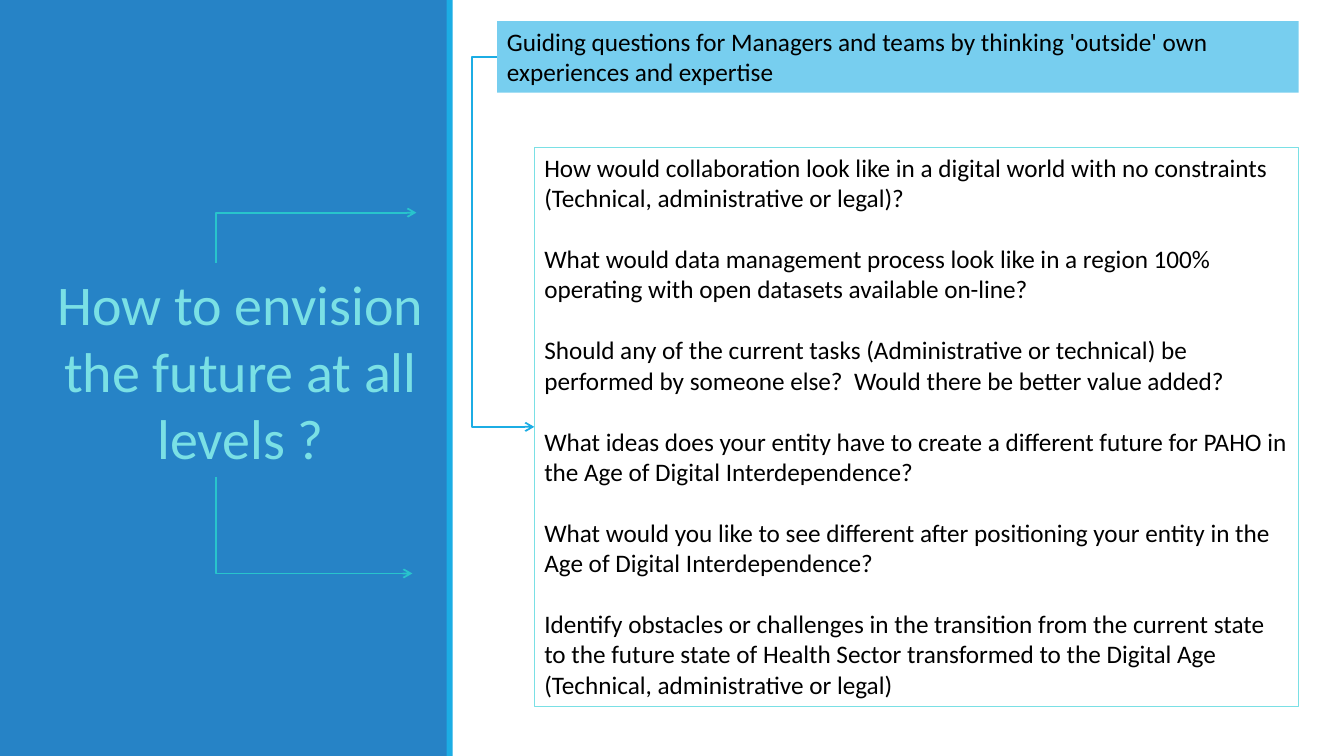
from pptx import Presentation
from pptx.dml.color import RGBColor
from pptx.enum.shapes import MSO_CONNECTOR, MSO_SHAPE
from pptx.enum.text import MSO_ANCHOR, PP_ALIGN
from pptx.oxml.ns import qn
from pptx.util import Inches, Pt
from lxml.etree import SubElement

W, H = 13.33, 7.5
PANEL_W = 4.43
COLORS = {
    "panel": "2683C6", "accent": "1CADE4", "title": "7AE0E5",
    "arrow": "28C4CC", "header": "77CEEF", "text": "000000",
}
HEADER = ("Guiding questions for Managers and teams by thinking 'outside' own "
          "experiences and expertise")
QUESTIONS = [
    "How would collaboration look like in a digital world with no constraints "
    "(Technical, administrative or legal)?",
    "What would data management process look like in a region 100% operating "
    "with open datasets available on-line?",
    "Should any of the current tasks (Administrative or technical) be performed "
    "by someone else?  Would there be better value added?",
    "What ideas does your entity have to create a different future for PAHO in "
    "the Age of Digital Interdependence?",
    "What would you like to see different after positioning your entity in the "
    "Age of Digital Interdependence?",
    "Identify obstacles or challenges in the transition from the current state "
    "to the future state of Health Sector transformed to the Digital Age "
    "(Technical, administrative or legal)",
]


def color(name):
    return RGBColor.from_string(COLORS[name])


def add_box(s, box, fill=None, line=None):
    sp = s.shapes.add_shape(MSO_SHAPE.RECTANGLE, *map(Inches, box))
    sp.shadow.inherit = False
    if fill:
        sp.fill.solid()
        sp.fill.fore_color.rgb = color(fill)
    else:
        sp.fill.background()
    if line:
        sp.line.color.rgb = color(line)
        sp.line.width = Pt(0.75)
    else:
        sp.line.fill.background()
    return sp


def format_text(tf, size, name, align, gap=0):
    tf.word_wrap = True
    for p in tf.paragraphs:
        p.alignment = align
        p.line_spacing = 1.0
        p.space_before = Pt(0)
        p.space_after = Pt(gap)
        for r in p.runs:
            r.font.size = Pt(size)
            r.font.name = "Calibri"
            r.font.color.rgb = color(name)


def add_elbow(s, begin, end, name, arrow_end, bend=None):
    """Draw one corner, or two corners when bend gives the middle leg's share."""
    c = s.shapes.add_connector(MSO_CONNECTOR.ELBOW, *map(Inches, begin + end))
    c.line.color.rgb = color(name)
    c.line.width = Pt(1.25)
    sp_pr = c._element.spPr
    geom = sp_pr.find(qn("a:prstGeom"))
    if bend is None:
        geom.set("prst", "bentConnector2")
    else:
        SubElement(geom.find(qn("a:avLst")), qn("a:gd"),
                   name="adj1", fmla=f"val {round(bend * 100000)}")
    SubElement(sp_pr.find(qn("a:ln")), qn(f"a:{arrow_end}"), type="arrow")
    SubElement(sp_pr, qn("a:effectLst"))


def title_panel(s, x, y, w, h):
    title = s.shapes.title
    stripe = add_box(s, (x + w - 0.01, y, 0.07, h), "accent")
    panel = add_box(s, (x, y, w, h), "panel")
    for sp in (stripe, panel):
        title._element.addprevious(sp._element)

    top, height = y + 2.61, 2.12
    title.left, title.top = Inches(x + 0.41), Inches(top)
    title.width, title.height = Inches(w - 0.48), Inches(height)
    tf = title.text_frame
    tf.text = "How to envision the future at all levels ?"
    tf.vertical_anchor = MSO_ANCHOR.MIDDLE
    format_text(tf, 40, "title", PP_ALIGN.CENTER)

    stem = x + 2.14
    add_elbow(s, (x + 4.13, top - 0.5), (stem, top), "arrow", "headEnd")
    add_elbow(s, (x + 4.09, top + height + 0.96), (stem, top + height),
              "arrow", "headEnd")


def guiding_questions(s, x, y, w, h):
    header_h, indent, list_h = 0.71, 0.37, 5.55
    list_x, list_y = x + indent, y + h - list_h
    questions = add_box(s, (list_x, list_y, w - indent, list_h), line="title")
    header = add_box(s, (x, y, w, header_h), "header")
    for sp, text, gap in ((questions, "\n".join(QUESTIONS), 22), (header, HEADER, 0)):
        tf = sp.text_frame
        tf.text = text
        tf.vertical_anchor = MSO_ANCHOR.TOP
        format_text(tf, 18, "text", PP_ALIGN.LEFT, gap)
    add_elbow(s, (x, y + header_h / 2), (list_x, list_y + list_h / 2),
              "accent", "tailEnd", bend=-0.68)


def main():
    prs = Presentation()
    prs.slide_width, prs.slide_height = Inches(W), Inches(H)
    s = prs.slides.add_slide(prs.slide_layouts[5])
    title_panel(s, 0, 0, PANEL_W, H)
    guiding_questions(s, PANEL_W + 0.5, 0.21, 7.95, 6.8)
    prs.save("out.pptx")


if __name__ == "__main__":
    main()
